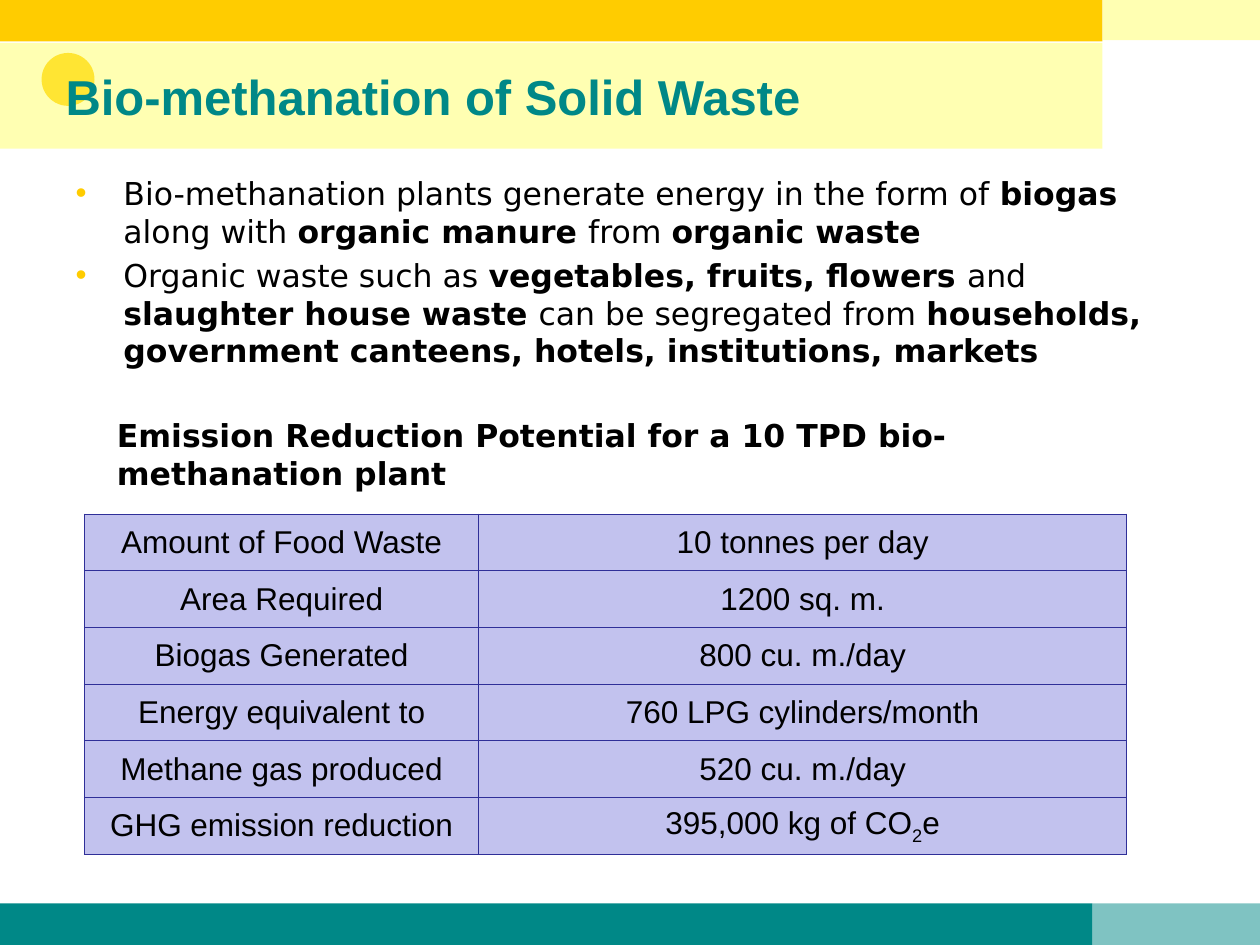
"""Build the slide on bio-methanation of solid waste."""
from dataclasses import dataclass

from lxml import etree
from pptx import Presentation, util as u
from pptx.dml.color import RGBColor
from pptx.enum import shapes, text
from pptx.oxml.ns import qn


@dataclass(frozen=True)
class Theme:
    gold: str = "FFCC00"
    lemon: str = "FFFF66"
    teal: str = "008887"
    ink: str = "000000"
    cell: str = "C2C2EE"
    border: str = "2F2F98"
    heading: str = "Arial"
    prose: str = "DejaVu Sans"
    title_size: int = 28
    text_size: int = 18


THEME = Theme()
TITLE = "Bio-methanation of Solid Waste"
POINTS = [
    [("Bio-methanation plants generate energy in the form of ", False),
     ("biogas", True), (" along with ", False), ("organic manure ", True),
     ("from ", False), ("organic waste", True)],
    [("Organic waste such as ", False),
     ("vegetables, fruits, flowers ", True), ("and ", False),
     ("slaughter house waste ", True), ("can be segregated from ", False),
     ("households, government canteens, hotels, institutions, markets", True)],
]
CAPTION = "Emission Reduction Potential for a 10 TPD bio-methanation plant"
FACTS = [
    ("Amount of Food Waste", ["10 tonnes per day"]),
    ("Area Required", ["1200 sq. m."]),
    ("Biogas Generated", ["800 cu. m./day"]),
    ("Energy equivalent to", ["760 LPG cylinders/month"]),
    ("Methane gas produced", ["520 cu. m./day"]),
    ("GHG emission reduction", ["395,000 kg of CO", "2", "e"]),
]
COLUMN_WIDTHS = (3.13, 5.14)
ROW_HEIGHT = 0.45
RECT, OVAL = shapes.MSO_SHAPE.RECTANGLE, shapes.MSO_SHAPE.OVAL
DECORATIONS = [
    (RECT, (0, 0, 8.75, 0.33), THEME.gold, 100),
    (RECT, (0, 7.17, 8.67, 0.33), THEME.teal, 100),
    (RECT, (8.75, -0.01, 1.25, 0.33), THEME.lemon, 50),
    (RECT, (8.67, 7.17, 1.33, 0.33), THEME.teal, 50),
    (OVAL, (0.33, 0.42, 0.42, 0.42), THEME.gold, 100),
]


def inches(box):
    return [u.Inches(length) for length in box]


def place(part, box):
    part.left, part.top, part.width, part.height = inches(box)


def paint(fill, color, opacity=100):
    fill.solid()
    fill.fore_color.rgb = RGBColor.from_string(color)
    if opacity < 100:
        tint = fill._xPr.find(qn("a:solidFill"))[0]
        etree.SubElement(tint, qn("a:alpha"), val=str(opacity * 1000))


def add_run(paragraph, words, font, size=THEME.text_size, color=THEME.ink, bold=False):
    run = paragraph.add_run()
    run.text = words
    run.font.name, run.font.size, run.font.bold = font, u.Pt(size), bold
    run.font.color.rgb = RGBColor.from_string(color)
    return run


def indent(paragraph, margin, first):
    properties = paragraph._p.get_or_add_pPr()
    properties.set("marL", str(u.Inches(margin)))
    properties.set("indent", str(u.Inches(first)))
    return properties


def add_bullet(paragraph):
    properties = indent(paragraph, 0.38, -0.38)
    bullet_color = etree.SubElement(properties, qn("a:buClr"))
    etree.SubElement(bullet_color, qn("a:srgbClr"), val=THEME.gold)
    etree.SubElement(properties, qn("a:buChar"), char="•")


def add_borders(cell):
    properties = cell._tc.get_or_add_tcPr()
    for side in ("lnL", "lnR", "lnT", "lnB"):
        line = etree.SubElement(properties, qn(f"a:{side}"), w=str(u.Pt(0.75)))
        fill = etree.SubElement(line, qn("a:solidFill"))
        etree.SubElement(fill, qn("a:srgbClr"), val=THEME.border)


def add_decorations(slide):
    for kind, box, color, opacity in DECORATIONS:
        decoration = slide.shapes.add_shape(kind, *inches(box))
        decoration.shadow.inherit = False
        decoration.line.fill.background()
        paint(decoration.fill, color, opacity)


def fill_title(title):
    place(title, (-0.01, 0.34, 8.76, 0.84))
    paint(title.fill, THEME.lemon, 50)
    frame = title.text_frame
    frame.auto_size = text.MSO_AUTO_SIZE.NONE
    frame.vertical_anchor = text.MSO_ANCHOR.MIDDLE
    heading = frame.paragraphs[0]
    indent(heading, 0.43, 0)
    heading.alignment = text.PP_ALIGN.LEFT
    add_run(heading, TITLE, THEME.heading, THEME.title_size, THEME.teal, True)


def fill_points(body):
    place(body, (0.5, 1.33, 9, 3.33))
    frame = body.text_frame
    frame.auto_size = text.MSO_AUTO_SIZE.NONE
    for number, runs in enumerate(POINTS):
        point = frame.add_paragraph() if number else frame.paragraphs[0]
        add_bullet(point)
        point.space_before = u.Pt(3.6 if number else 0)
        for words, bold in runs:
            add_run(point, words, THEME.prose, bold=bold)


def fill_cell(cell, pieces):
    add_borders(cell)
    paint(cell.fill, THEME.cell)
    cell.margin_left = cell.margin_right = cell.margin_top = cell.margin_bottom = 0
    cell.vertical_anchor = text.MSO_ANCHOR.MIDDLE
    entry = cell.text_frame.paragraphs[0]
    entry.alignment = text.PP_ALIGN.CENTER
    for position, words in enumerate(pieces):
        run = add_run(entry, words, THEME.heading)
        if position % 2:
            run.font._element.set("baseline", "-25000")


def add_facts(slide):
    box = (0.67, 4.08, sum(COLUMN_WIDTHS), ROW_HEIGHT * len(FACTS))
    facts = slide.shapes.add_table(len(FACTS), len(COLUMN_WIDTHS), *inches(box)).table
    facts.first_row = facts.horz_banding = False
    for column, width in zip(facts.columns, COLUMN_WIDTHS):
        column.width = u.Inches(width)
    for row, (label, value) in zip(facts.rows, FACTS):
        row.height = u.Inches(ROW_HEIGHT)
        for cell, pieces in zip(row.cells, ([label], value)):
            fill_cell(cell, pieces)


def add_caption(slide):
    frame = slide.shapes.add_textbox(*inches((0.83, 3.25, 8.5, 0.71))).text_frame
    frame.word_wrap = True
    add_run(frame.paragraphs[0], CAPTION, THEME.prose, bold=True)


def main():
    deck = Presentation()
    deck.slide_width, deck.slide_height = inches((10, 7.5))
    slide = deck.slides.add_slide(deck.slide_layouts[1])
    title, body = slide.shapes.title, slide.placeholders[1]
    add_decorations(slide)
    for part in (title, body):
        slide.shapes._spTree.append(part._element)
    fill_title(title)
    fill_points(body)
    add_facts(slide)
    add_caption(slide)
    deck.save("out.pptx")


if __name__ == "__main__":
    main()
